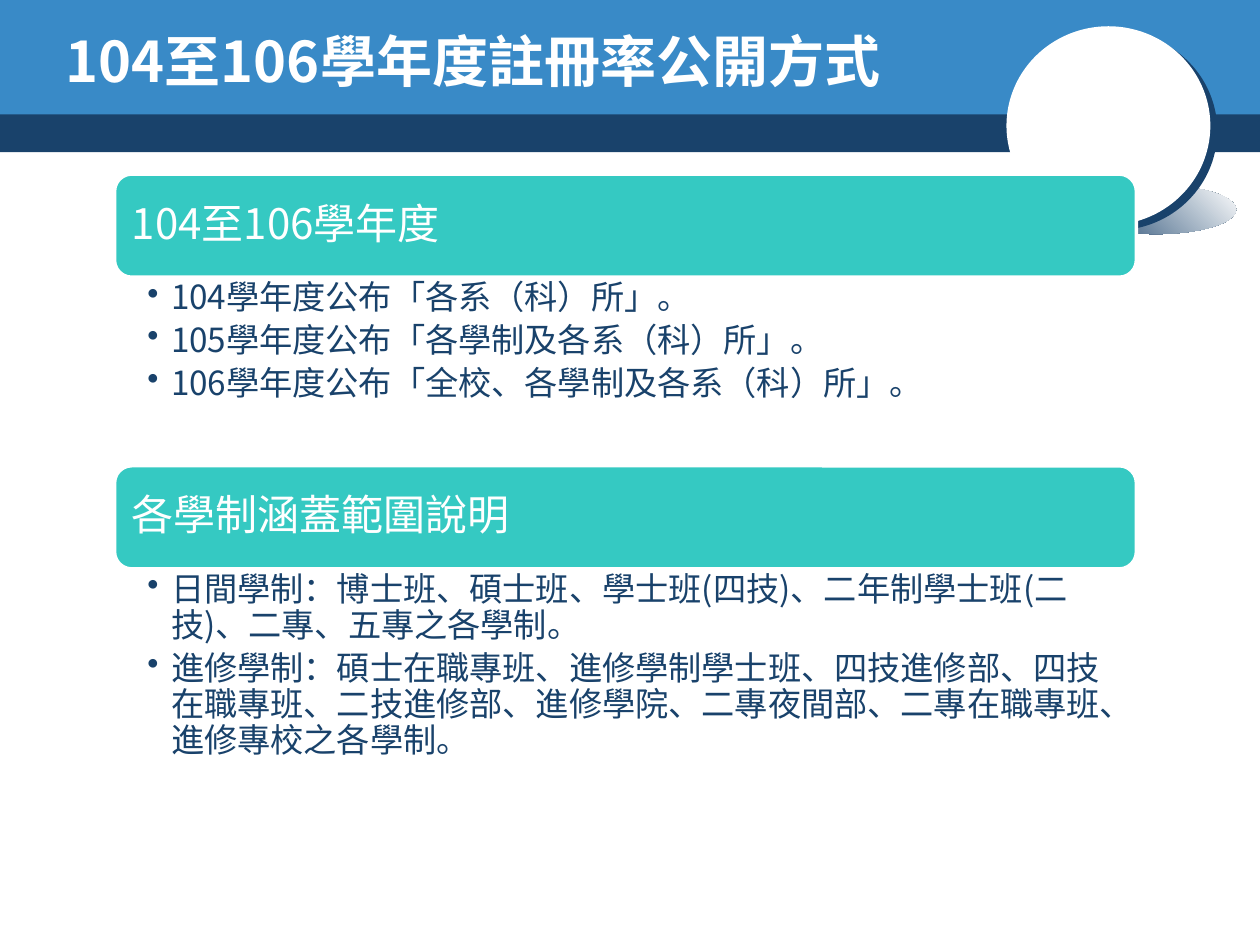
from dataclasses import dataclass

from lxml import etree
from pptx import Presentation
from pptx import util as u
from pptx.dml.color import RGBColor
from pptx.enum import shapes, text
from pptx.oxml import parse_xml
from pptx.oxml.ns import nsdecls, qn
from pptx.shapes.autoshape import Shape
from pptx.slide import Slide
from pptx.text.text import TextFrame


@dataclass(frozen=True)
class Theme:
    font: str = "Noto Sans CJK SC"
    navy: str = "19426B"
    blue: str = "398AC7"
    teal: str = "35C9C2"
    white: str = "FFFFFF"
    title_size: int = 32
    heading_size: int = 24
    body_size: int = 19


@dataclass(frozen=True)
class Box:
    left: float
    top: float
    width: float
    height: float

    def lengths(self) -> list[u.Length]:
        return [u.Cm(v) for v in (self.left, self.top, self.width, self.height)]


@dataclass(frozen=True)
class Section:
    heading: str
    points: tuple[str, ...]
    points_height: float


THEME = Theme()
SLIDE_WIDTH, SLIDE_HEIGHT = 25.4, 19.05
SECTION_LEFT, SECTION_TOP, SECTION_WIDTH = 2.31, 3.51, 20.6
HEADING_HEIGHT = 2.08
BULLET_INDENT = 0.48

TITLE = "104至106學年度註冊率公開方式"
SECTIONS = (
    Section("104至106學年度", (
        "104學年度公布「各系（科）所」。",
        "105學年度公布「各學制及各系（科）所」。",
        "106學年度公布「全校、各學制及各系（科）所」。",
    ), 3.8),
    Section("各學制涵蓋範圍說明", (
        "日間學制：博士班、碩士班、學士班(四技)、二年制學士班(二技)、二專、五專之各學制。",
        "進修學制：碩士在職專班、進修學制學士班、四技進修部、四技在職專班、二技進修部、"
        "進修學院、二專夜間部、二專在職專班、進修專校之各學制。",
    ), 5.66),
)


def set_format(target: object, values: dict[str, object]) -> None:
    for name, value in values.items():
        setattr(target, name, value)


def add_figure(slide: Slide, kind: shapes.MSO_SHAPE, box: Box, color: str) -> Shape:
    figure = slide.shapes.add_shape(kind, *box.lengths())
    figure.shadow.inherit = False
    figure.fill.solid()
    figure.fill.fore_color.rgb = RGBColor.from_string(color)
    figure.line.fill.background()
    return figure


def write(frame: TextFrame, lines: tuple[str, ...], size: int, color: str,
          frame_format: dict[str, object], paragraph_format: dict[str, object],
          bold: bool = False, bulleted: bool = False) -> None:
    set_format(frame, {"word_wrap": True, **frame_format})
    for index, line in enumerate(lines):
        paragraph = frame.paragraphs[0] if index == 0 else frame.add_paragraph()
        set_format(paragraph, {"alignment": text.PP_ALIGN.LEFT, **paragraph_format})
        if bulleted:
            properties = paragraph._p.get_or_add_pPr()
            properties.set("marL", str(u.Cm(BULLET_INDENT)))
            properties.set("indent", str(-u.Cm(BULLET_INDENT)))
            etree.SubElement(properties, qn("a:buChar")).set("char", "•")
        run = paragraph.add_run()
        run.text = line
        set_format(run.font, {"name": THEME.font, "size": u.Pt(size), "bold": bold})
        run.font.color.rgb = RGBColor.from_string(color)
        east_asian = etree.SubElement(run._r.get_or_add_rPr(), qn("a:ea"))
        east_asian.set("typeface", THEME.font)


def add_banner(slide: Slide) -> None:
    rectangle, oval = shapes.MSO_SHAPE.RECTANGLE, shapes.MSO_SHAPE.OVAL
    add_figure(slide, rectangle, Box(0, 2.21, SLIDE_WIDTH, 0.86), THEME.navy)
    add_figure(slide, rectangle, Box(0, 0, SLIDE_WIDTH, 2.31), THEME.blue)

    floor_shade = add_figure(slide, oval, Box(21.69, 3.73, 3.23, 0.99), THEME.navy)
    floor_shade.fill.gradient()
    floor_shade.fill.gradient_angle = 45
    for stop, color in zip(floor_shade.fill.gradient_stops, (THEME.navy, THEME.white)):
        stop.color.rgb = RGBColor.from_string(color)

    ball = add_figure(slide, oval, Box(20.29, 0.53, 4.11, 4.01), THEME.white)
    effects = ball._element.spPr.find(qn("a:effectLst"))
    effects.append(parse_xml(
        f'<a:outerShdw {nsdecls("a")} dist="{u.Pt(5)}" dir="{37 * 60000}" '
        f'algn="ctr" rotWithShape="0"><a:srgbClr val="{THEME.navy}"/></a:outerShdw>'))

    title = slide.shapes.add_textbox(*Box(1.07, 0.43, 20.52, 1.57).lengths())
    write(title.text_frame, (TITLE,), THEME.title_size, THEME.white,
          {"vertical_anchor": text.MSO_ANCHOR.MIDDLE}, {}, bold=True)


def add_section(slide: Slide, section: Section, top: float) -> float:
    heading = add_figure(slide, shapes.MSO_SHAPE.ROUNDED_RECTANGLE,
                         Box(SECTION_LEFT, top, SECTION_WIDTH, HEADING_HEIGHT), THEME.teal)
    heading.line.color.rgb = RGBColor.from_string(THEME.white)
    heading.line.width = u.Pt(2)
    write(heading.text_frame, (section.heading,), THEME.heading_size, THEME.white,
          {"vertical_anchor": text.MSO_ANCHOR.MIDDLE}, {"line_spacing": 0.9})

    points_top = top + HEADING_HEIGHT
    points = slide.shapes.add_textbox(
        *Box(SECTION_LEFT, points_top, SECTION_WIDTH, section.points_height).lengths())
    write(points.text_frame, section.points, THEME.body_size, THEME.navy,
          {"margin_left": u.Cm(0.66), "margin_right": u.Cm(0.48),
           "margin_top": u.Cm(0.08), "margin_bottom": u.Cm(0.08)},
          {"level": 1, "line_spacing": 0.9, "space_after": u.Pt(4)}, bulleted=True)
    return points_top + section.points_height


def main() -> None:
    deck = Presentation()
    set_format(deck, {"slide_width": u.Cm(SLIDE_WIDTH), "slide_height": u.Cm(SLIDE_HEIGHT)})
    slide = deck.slides.add_slide(deck.slide_layouts[6])
    add_banner(slide)
    top = SECTION_TOP
    for section in SECTIONS:
        top = add_section(slide, section, top)
    deck.save("out.pptx")


if __name__ == "__main__":
    main()
